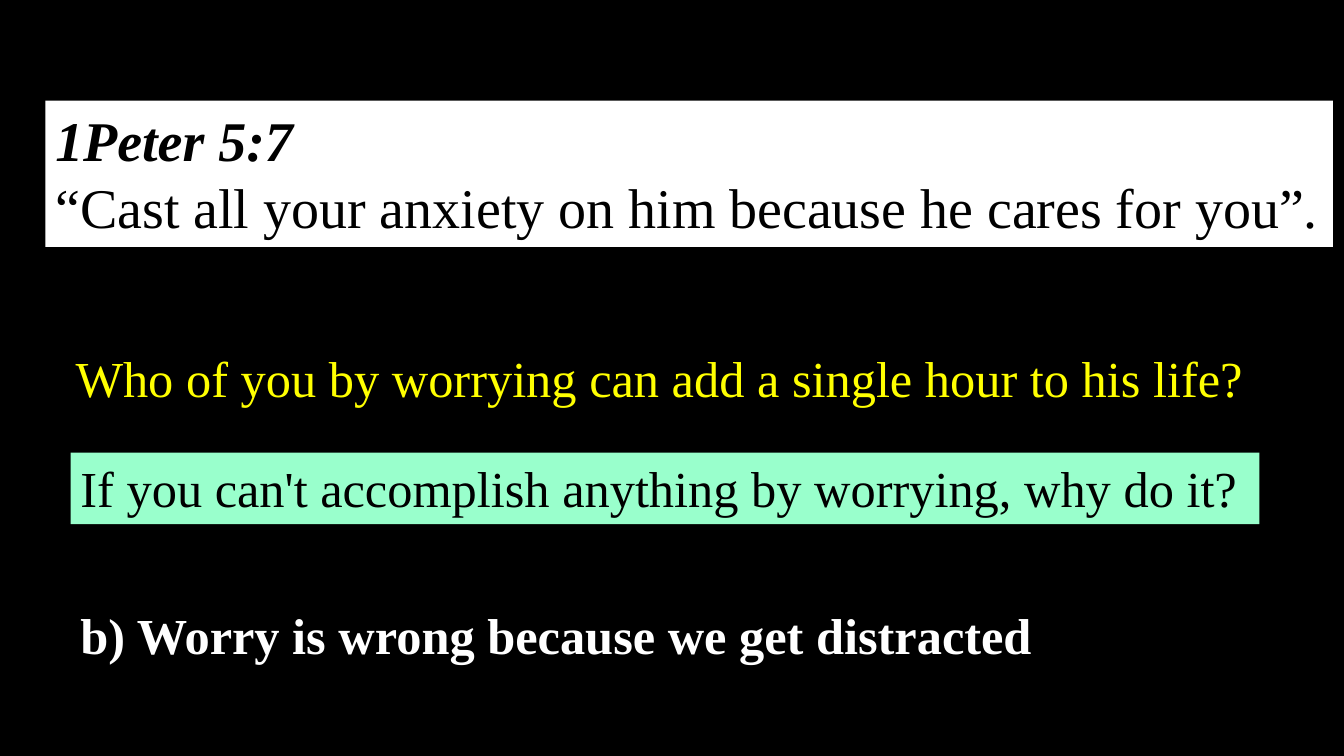
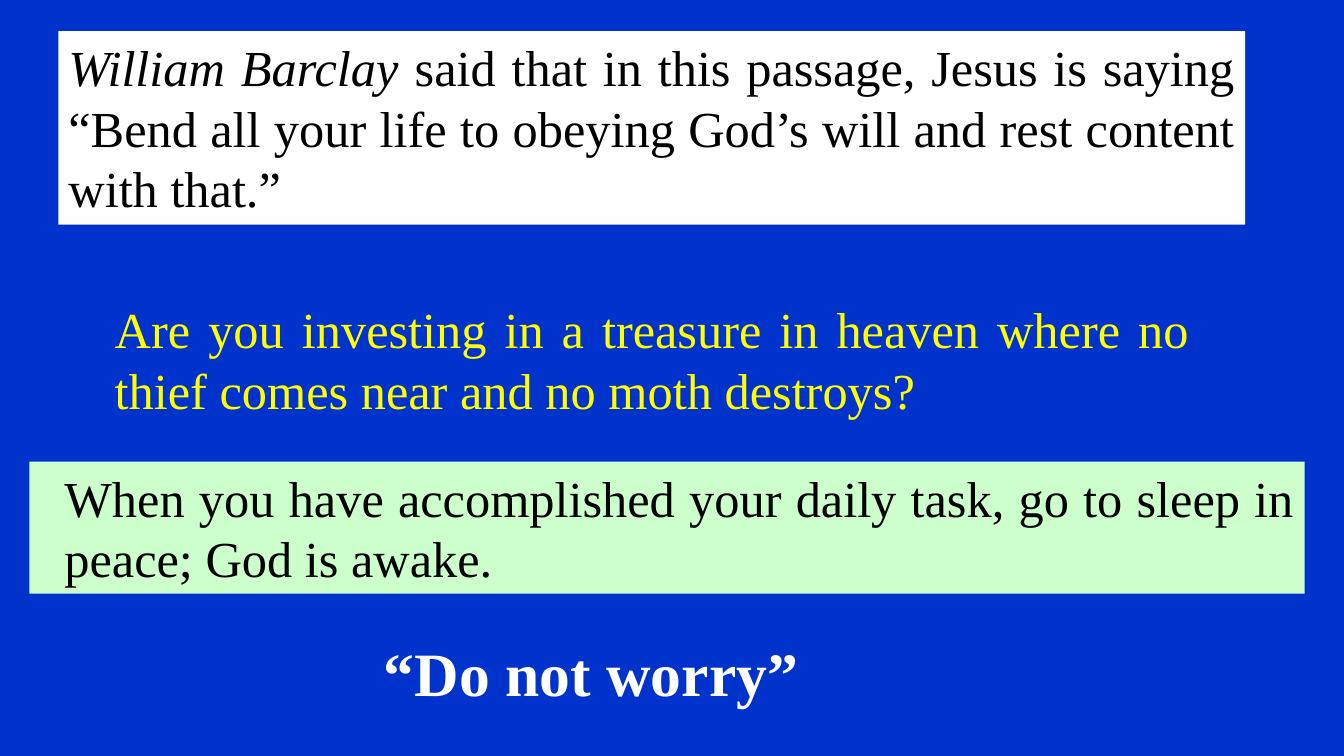
import dataclasses

import pptx
import pptx.dml.color
import pptx.enum.shapes
import pptx.enum.text
import pptx.util


@dataclasses.dataclass(frozen=True)
class Theme:
    font: str = "Times New Roman"
    black: str = "000000"
    blue: str = "0033CC"
    white: str = "FFFFFF"
    yellow: str = "FFFF00"
    mint: str = "99FFCC"
    pale_green: str = "CCFFCC"
    body: int = 36
    verse: int = 40
    closing: int = 44
    indent: float = 0.25


THEME = Theme()
WIDTH = pptx.util.Inches(13.33)
HEIGHT = pptx.util.Inches(7.5)
BLANK_LAYOUT = 6
PLAIN, BOLD, ITALIC, BOLD_ITALIC = "", "b", "i", "bi"


def rgb(colour):
    return pptx.dml.color.RGBColor.from_string(colour)


def place(left, top, width, height):
    """Turn percentages of the slide's size into lengths."""
    return (round(WIDTH * left / 100), round(HEIGHT * top / 100),
            round(WIDTH * width / 100), round(HEIGHT * height / 100))


def add_slide(presentation, background):
    slide = presentation.slides.add_slide(presentation.slide_layouts[BLANK_LAYOUT])
    slide.background.fill.solid()
    slide.background.fill.fore_color.rgb = rgb(background)
    return slide


def write(shape, paragraphs, colour, size, justified=False, indent=0):
    """Fill a shape with paragraphs, each a list of (text, style) runs."""
    text_frame = shape.text_frame
    text_frame.word_wrap = True
    text_frame.vertical_anchor = pptx.enum.text.MSO_ANCHOR.TOP
    alignment = pptx.enum.text.PP_ALIGN
    for index, runs in enumerate(paragraphs):
        paragraph = text_frame.add_paragraph() if index else text_frame.paragraphs[0]
        paragraph.alignment = alignment.JUSTIFY if justified else alignment.LEFT
        if indent:
            properties = paragraph._p.get_or_add_pPr()
            properties.set("marL", str(pptx.util.Inches(indent)))
            properties.set("indent", "0")
        for text, style in runs:
            run = paragraph.add_run()
            run.text = text
            run.font.name = THEME.font
            run.font.size = pptx.util.Pt(size)
            run.font.bold = BOLD in style
            run.font.italic = ITALIC in style
            run.font.color.rgb = rgb(colour)


def add_panel(slide, box, paragraphs, fill, size=THEME.body, **layout):
    """Black text on a filled rectangle."""
    rectangle = pptx.enum.shapes.MSO_SHAPE.RECTANGLE
    panel = slide.shapes.add_shape(rectangle, *place(*box))
    panel.shadow.inherit = False
    panel.fill.solid()
    panel.fill.fore_color.rgb = rgb(fill)
    panel.line.fill.background()
    write(panel, paragraphs, THEME.black, size, **layout)


def add_line(slide, box, text, colour, size=THEME.body, style=PLAIN, **layout):
    """Text straight on the background."""
    text_box = slide.shapes.add_textbox(*place(*box))
    write(text_box, [[(text, style)]], colour, size, **layout)


def build_anxiety_slide(presentation):
    slide = add_slide(presentation, THEME.black)
    add_panel(slide, (3.38, 13.33, 95.8, 19.33),
              [[("1Peter 5:7", BOLD_ITALIC)],
               [("“Cast all your anxiety on him because he cares for you”.", PLAIN)]],
              THEME.white, THEME.verse)
    add_panel(slide, (5.25, 59.87, 88.45, 9.47),
              [[("If you can't accomplish anything by worrying, why do it?", PLAIN)]],
              THEME.mint)
    add_line(slide, (4.88, 45.2, 89.27, 9.47),
             "Who of you by worrying can add a single hour to his life?", THEME.yellow)
    add_line(slide, (5.25, 79.2, 72.84, 9.47),
             "b) Worry is wrong because we get distracted", THEME.white, style=BOLD)


def build_contentment_slide(presentation):
    slide = add_slide(presentation, THEME.blue)
    add_panel(slide, (4.35, 4.13, 88.3, 25.6),
              [[("William Barclay ", ITALIC),
                ("said that in this passage, Jesus is saying “Bend all your life to "
                 "obeying God’s will and rest content with that.”", PLAIN)]],
              THEME.white, justified=True)
    add_line(slide, (7.8, 38.8, 81.47, 17.47),
             "Are you investing in a treasure in heaven where no thief comes near "
             "and no moth destroys?", THEME.yellow, justified=True)
    add_panel(slide, (2.18, 61.07, 94.9, 17.47),
              [[("When you have accomplished your daily task, go to sleep in peace; "
                 "God is awake.", PLAIN)]],
              THEME.pale_green, justified=True, indent=THEME.indent)
    add_line(slide, (27.83, 83.33, 32.63, 11.2), "“Do not worry”",
             THEME.white, THEME.closing, BOLD)


def main():
    presentation = pptx.Presentation()
    presentation.slide_width = WIDTH
    presentation.slide_height = HEIGHT
    build_anxiety_slide(presentation)
    build_contentment_slide(presentation)
    presentation.save("out.pptx")


if __name__ == "__main__":
    main()
